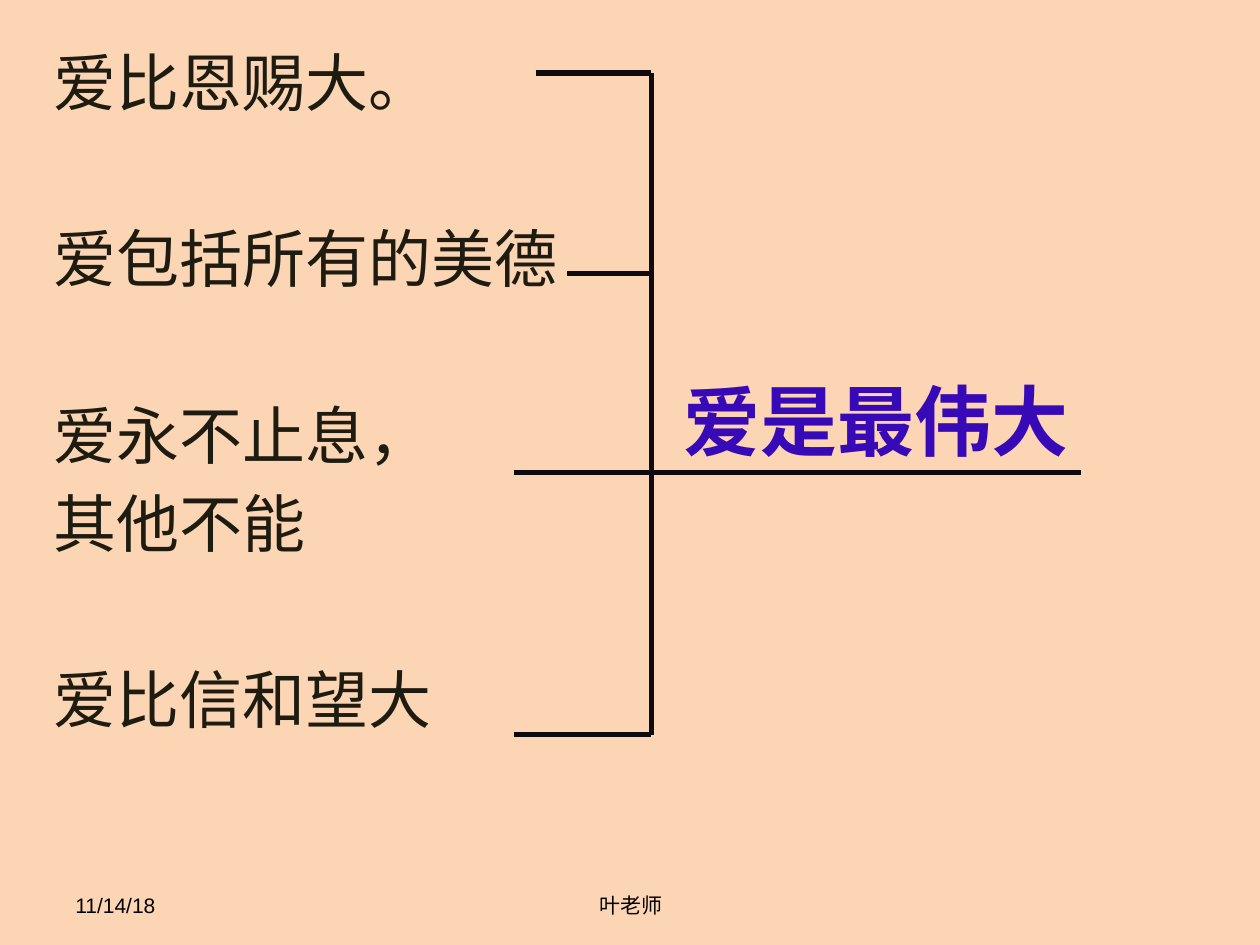
from dataclasses import dataclass

import pptx
import pptx.dml.color
import pptx.enum.shapes
import pptx.enum.text
import pptx.oxml
import pptx.oxml.ns
import pptx.util
from pptx.util import Inches, Pt

PEACH = pptx.dml.color.RGBColor(0xFC, 0xD5, 0xB5)
DARK_OLIVE = pptx.dml.color.RGBColor(0x1E, 0x1C, 0x11)
VIOLET = pptx.dml.color.RGBColor(0x37, 0x09, 0xB7)
BLACK = pptx.dml.color.RGBColor(0, 0, 0)
INK = pptx.dml.color.RGBColor(0x0D, 0x0A, 0x10)

CJK = "Noto Sans CJK SC"
LEFT = pptx.enum.text.PP_ALIGN.LEFT
CENTER = pptx.enum.text.PP_ALIGN.CENTER
TOP = pptx.enum.text.MSO_ANCHOR.TOP
BOTTOM = pptx.enum.text.MSO_ANCHOR.BOTTOM


@dataclass
class Line:
    text: str
    space_before: float = 0


@dataclass
class TextBlock:
    box: tuple[float, float, float, float]
    lines: list[Line]
    size: float
    color: pptx.dml.color.RGBColor
    font: str = CJK
    bold: bool = False
    line_height: float | None = None
    top_inset: float = 0.05
    align: pptx.enum.text.PP_ALIGN = LEFT
    anchor: pptx.enum.text.MSO_ANCHOR = TOP


@dataclass
class Stroke:
    start: tuple[float, float]
    end: tuple[float, float]


def draw_text(slide: pptx.slide.Slide, block: TextBlock) -> None:
    frame = slide.shapes.add_textbox(*map(Inches, block.box)).text_frame
    frame.word_wrap = True
    frame.vertical_anchor = block.anchor
    frame.margin_top = Inches(block.top_inset)
    frame.text = "\n".join(line.text for line in block.lines)
    for paragraph, line in zip(frame.paragraphs, block.lines):
        paragraph.alignment = block.align
        paragraph.space_before = Pt(line.space_before)
        if block.line_height:
            paragraph.line_spacing = Pt(block.line_height)
        for run in paragraph.runs:
            run.font.size = Pt(block.size)
            run.font.bold = block.bold
            run.font.name = block.font
            run.font.color.rgb = block.color
            # East Asian characters take their own typeface
            east_asian = pptx.oxml.parse_xml(
                f'<a:ea {pptx.oxml.ns.nsdecls("a")} typeface="{block.font}"/>')
            run.font._element.append(east_asian)


def draw_stroke(slide: pptx.slide.Slide, stroke: Stroke) -> None:
    connector = slide.shapes.add_connector(
        pptx.enum.shapes.MSO_CONNECTOR.STRAIGHT,
        *map(Inches, stroke.start + stroke.end))
    connector.line.color.rgb = INK
    connector.line.width = Pt(3)
    connector._element.spPr.append(
        pptx.oxml.parse_xml(f'<a:effectLst {pptx.oxml.ns.nsdecls("a")}/>'))


# Reasons on the left: close lines continue a reason, wide gaps part them
NEXT_LINE, NEXT_REASON = 3.9, 54.3
REASONS = TextBlock(
    (0.33, 0.25, 4.67, 6.42),
    [Line("爱比恩赐大。"),
     Line("爱包括所有的美德", NEXT_REASON),
     Line("爱永不止息，", NEXT_REASON),
     Line("其他不能", NEXT_LINE),
     Line("爱比信和望大", NEXT_REASON)],
    36, DARK_OLIVE, line_height=46.5)

CONCLUSION = TextBlock((5.33, 2, 4.42, 4.58), [Line("爱是最伟大")], 44, VIOLET,
                       bold=True, line_height=56, top_inset=0.92)

DATE = TextBlock((0.5, 6.83, 2.33, 0.5), [Line("11/14/18")], 12, BLACK,
                 font="Arial", anchor=BOTTOM)
TEACHER = TextBlock((3.42, 6.83, 3.17, 0.5), [Line("叶老师")], 12, BLACK,
                    font="Arial", align=CENTER, anchor=BOTTOM)

# Bracket: a spine, one branch per reason, and a stem to the conclusion
SPINE_X = 5.17
BRANCHES = [(4.25, 0.58), (4.5, 2.17), (4.08, 3.75), (4.08, 5.83)]
BRACKET = [
    Stroke((SPINE_X, BRANCHES[0][1]), (SPINE_X, BRANCHES[-1][1])),
    *(Stroke((x, y), (SPINE_X, y)) for x, y in BRANCHES),
    Stroke((SPINE_X, 3.75), (8.58, 3.75)),
]


def main() -> None:
    deck = pptx.Presentation()
    deck.slide_width, deck.slide_height = Inches(10), Inches(7.5)
    slide = deck.slides.add_slide(deck.slide_layouts[6])
    slide.background.fill.solid()
    slide.background.fill.fore_color.rgb = PEACH

    for block in (REASONS, CONCLUSION, DATE, TEACHER):
        draw_text(slide, block)
    for stroke in BRACKET:
        draw_stroke(slide, stroke)

    deck.save("out.pptx")


if __name__ == "__main__":
    main()
